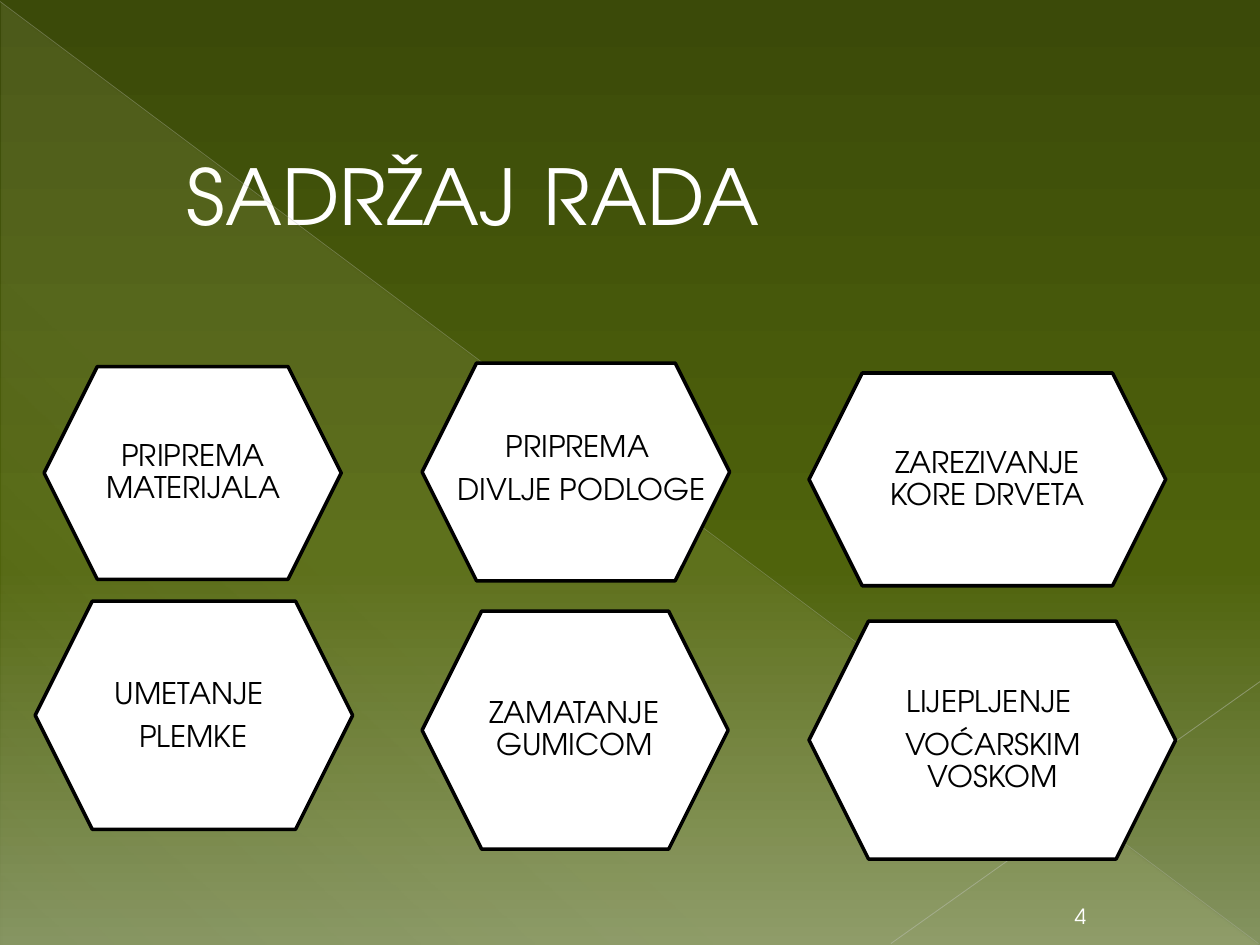
from lxml import etree
from pptx import Presentation
from pptx.dml.color import RGBColor
from pptx.enum.shapes import MSO_CONNECTOR, MSO_SHAPE
from pptx.enum.text import MSO_ANCHOR, MSO_AUTO_SIZE, PP_ALIGN
from pptx.oxml.ns import qn
from pptx.util import Cm, Pt

HEXAGON, TRIANGLE = MSO_SHAPE.HEXAGON, MSO_SHAPE.RIGHT_TRIANGLE
STRAIGHT = MSO_CONNECTOR.STRAIGHT
TOP, MIDDLE, BOTTOM = MSO_ANCHOR.TOP, MSO_ANCHOR.MIDDLE, MSO_ANCHOR.BOTTOM
LEFT, CENTER = PP_ALIGN.LEFT, PP_ALIGN.CENTER
NO_FIT = MSO_AUTO_SIZE.NONE

FONT = "TeX Gyre Adventor"
COLORS = {
    "white": "FFFFFF", "black": "000000", "cream": "FEFAC9",
    "dark": "3B4A09", "olive": "4F630C", "sage": "849360",
    "ray": "BABDB3", "short_ray": "C1C4BC",
}
TITLE_RUNS = [("SADRŽAJ", 44), (" ", 54), ("RADA", 44)]
STEPS = [
    (["PRIPREMA MATERIJALA"], (0.89, 7.39, 5.99, 4.29), (1.7, 7.95, 4.39, 3.15)),
    (["PRIPREMA ", "DIVLJE PODLOGE"], (8.51, 7.32, 6.2, 4.39), (8.92, 7.72, 5.61, 3.48)),
    (["ZAREZIVANJE KORE DRVETA"], (16.31, 7.52, 7.19, 4.29), (17.27, 8.1, 5.28, 3.15)),
    (["UMETANJE ", "PLEMKE"], (0.71, 12.12, 6.4, 4.6), (1.55, 12.75, 4.7, 3.38)),
    (["ZAMATANJE GUMICOM"], (8.51, 12.32, 6.17, 4.8), (9.32, 12.95, 4.52, 3.53)),
    (["LIJEPLJENJE ", "VOĆARSKIM VOSKOM"], (16.31, 12.52, 7.39, 4.8), (17.3, 13.16, 5.44, 3.53)),
]


def cm(box):
    return [Cm(v) for v in box]


def rgb(name):
    return RGBColor.from_string(COLORS[name])


def add_alpha(color, percent):
    etree.SubElement(color, qn("a:alpha"), val=str(percent * 1000))


class SlideBuilder:
    def __init__(self, slide):
        self.s = slide

    def gradient(self, fill, owner, stops, angle):
        fill.gradient()
        grad = next(owner.iter(qn("a:gradFill")))
        for child in list(grad):
            grad.remove(child)
        gs_lst = etree.SubElement(grad, qn("a:gsLst"))
        for pos, name, alpha in stops:
            gs = etree.SubElement(gs_lst, qn("a:gs"), pos=str(pos * 1000))
            color = etree.SubElement(gs, qn("a:srgbClr"), val=COLORS[name])
            if alpha < 100:
                add_alpha(color, alpha)
        etree.SubElement(grad, qn("a:lin"), ang=str(angle * 60000), scaled="0")

    def background(self, stops):
        self.gradient(self.s.background.fill, self.s.element, stops, 90)

    def glow(self, box, stops):
        sp = self.s.shapes.add_shape(TRIANGLE, *cm(box))
        sp.shadow.inherit = False
        sp.line.fill.background()
        self.gradient(sp.fill, sp.element.spPr, stops, 133)

    def ray(self, points, color, width, alpha):
        line = self.s.shapes.add_connector(STRAIGHT, *cm(points))
        line.line.color.rgb = rgb(color)
        line.line.width = Pt(width)
        sp_pr = line.element.spPr
        add_alpha(next(sp_pr.iter(qn("a:srgbClr"))), alpha)
        etree.SubElement(sp_pr, qn("a:effectLst"))

    def style(self, r, size, color):
        r.font.name, r.font.size, r.font.color.rgb = FONT, Pt(size), rgb(color)

    def title(self, runs, box):
        sp = self.s.shapes.title
        sp.left, sp.top, sp.width, sp.height = cm(box)
        tf = sp.text_frame
        tf.auto_size, tf.vertical_anchor = NO_FIT, TOP
        p = tf.paragraphs[0]
        p.alignment = LEFT
        for text, size in runs:
            r = p.add_run()
            r.text = text
            self.style(r, size, "white")

    def text(self, shapes, lines, box, size, color, anchor):
        tf = shapes.add_textbox(*cm(box)).text_frame
        tf.word_wrap, tf.vertical_anchor = True, anchor
        tf.text = "\n".join(lines)
        for p in tf.paragraphs:
            p.alignment = CENTER
            self.style(p.runs[0], size, color)
        return tf

    def step(self, lines, box, text_box):
        shapes = self.s.shapes.add_group_shape().shapes
        sp = shapes.add_shape(HEXAGON, *cm(box))
        sp.shadow.inherit = False
        sp.fill.solid()
        sp.fill.fore_color.rgb = rgb("white")
        sp.line.color.rgb = rgb("black")
        sp.line.width = Pt(2)
        tf = self.text(shapes, lines, text_box, 17, "black", MIDDLE)
        tf.margin_left = tf.margin_right = tf.margin_top = tf.margin_bottom = Cm(0.18)
        for p in tf.paragraphs:
            p.line_spacing, p.space_after = 0.9, Pt(6)


def main():
    prs = Presentation()
    prs.slide_width, prs.slide_height = Cm(25.4), Cm(19.05)
    b = SlideBuilder(prs.slides.add_slide(prs.slide_layouts[5]))
    b.background([(0, "dark", 100), (60, "olive", 100), (100, "sage", 100)])
    b.glow((0.03, 0.05, 25.35, 19), [(0, "cream", 10), (70, "cream", 8), (100, "cream", 1)])
    b.ray((0, 0.03, 25.37, 19.02), "ray", 0.39, 35)
    b.ray((25.4, 13.74, 17.96, 19.02), "short_ray", 0.47, 45)
    b.title(TITLE_RUNS, (3.51, 2.51, 17.2, 2.57))
    for lines, box, text_box in STEPS:
        b.step(lines, box, text_box)
    b.text(b.s.shapes, ["4"], (21.08, 18.01, 1.4, 0.84), 12, "white", BOTTOM)
    prs.save("out.pptx")


if __name__ == "__main__":
    main()
